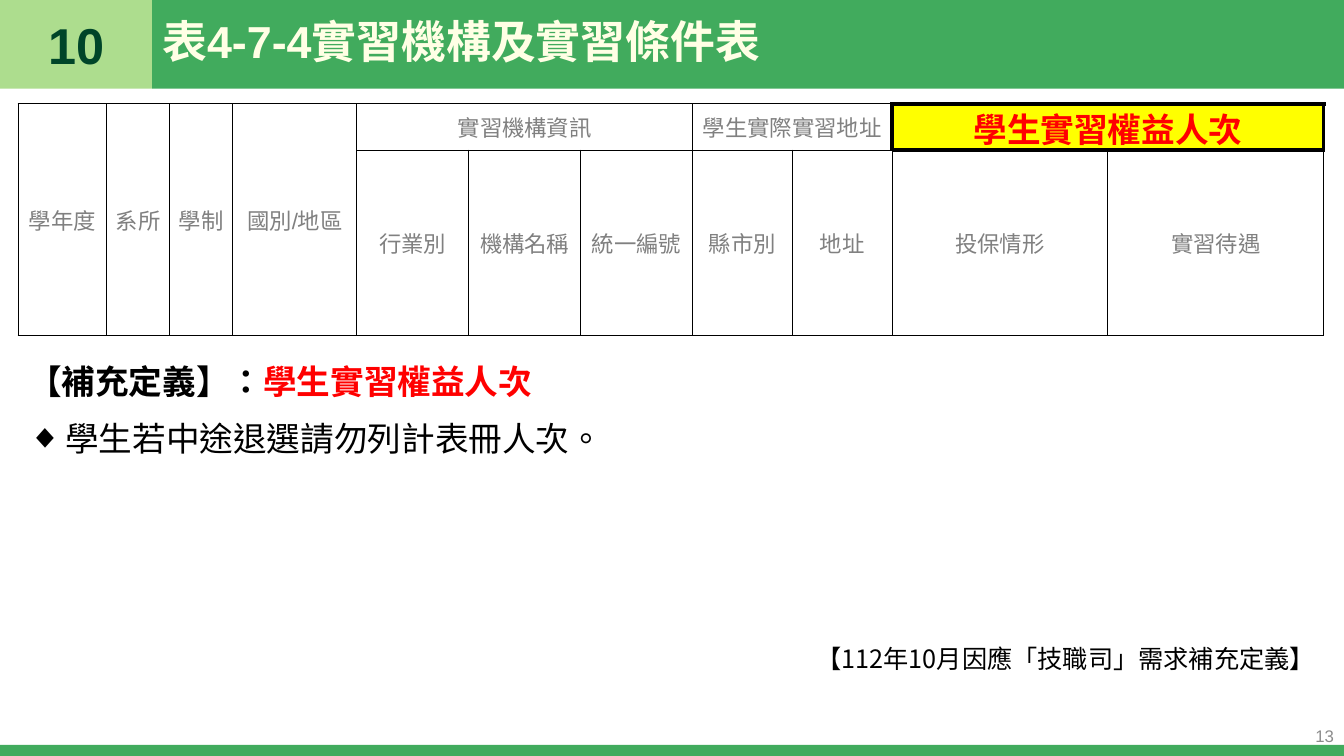
from dataclasses import dataclass

from lxml import etree
from pptx import Presentation
from pptx import util as u
from pptx.dml.color import RGBColor
from pptx.enum import shapes, text
from pptx.oxml.ns import qn


@dataclass(frozen=True)
class Theme:
    green: str = "41AB5D"
    light_green: str = "ADDD8E"
    dark_green: str = "004529"
    cream: str = "FFFFE5"
    black: str = "000000"
    gray: str = "808080"
    page_gray: str = "8C8C8C"
    red: str = "FF0000"
    yellow: str = "FFFF00"
    latin: str = "Arial"
    cjk: str = "Noto Sans CJK SC"
    number: int = 36
    title: int = 32
    body: int = 24
    note: int = 18
    cell: int = 16
    page: int = 12
    thin: int = 1
    thick: int = 3


class SlideBuilder:
    def __init__(self, slide, theme):
        self.slide = slide
        self.theme = theme

    def format_run(self, r, size, color, bold=False, font=None):
        r.font.size = u.Pt(size)
        r.font.bold = bold
        r.font.color.rgb = RGBColor.from_string(color)
        r.font.name = font or self.theme.latin
        rPr = r._r.get_or_add_rPr()
        rPr.set("lang", "zh-TW")
        etree.SubElement(rPr, qn("a:ea")).set("typeface", self.theme.cjk)

    def bar(self, left, top, width, height, color):
        sp = self.slide.shapes.add_shape(
            shapes.MSO_SHAPE.RECTANGLE, *map(u.Inches, (left, top, width, height)))
        sp.shadow.inherit = False
        sp.fill.solid()
        sp.fill.fore_color.rgb = RGBColor.from_string(color)
        sp.line.fill.background()

    def textbox(self, left, top, width, height, anchor=text.MSO_ANCHOR.MIDDLE):
        sp = self.slide.shapes.add_textbox(*map(u.Inches, (left, top, width, height)))
        tf = sp.text_frame
        tf.word_wrap = True
        tf.vertical_anchor = anchor
        return tf

    def paragraph(self, p, runs, align=text.PP_ALIGN.LEFT, spacing=1.0, before=0):
        p.alignment = align
        p.line_spacing = spacing
        p.space_before = u.Pt(before)
        for content, *style in runs:
            r = p.add_run()
            r.text = content
            self.format_run(r, *style)

    def bullet(self, p, symbol, indent):
        pPr = p._p.get_or_add_pPr()
        pPr.set("marL", str(u.Inches(indent)))
        pPr.set("indent", str(-u.Inches(indent)))
        etree.SubElement(pPr, qn("a:buFont")).set("typeface", self.theme.latin)
        etree.SubElement(pPr, qn("a:buChar")).set("char", symbol)

    def borders(self, cell, **widths):
        tcPr = cell._tc.get_or_add_tcPr()
        for side in "LRTB":
            width = widths.get(side, self.theme.thin)
            ln = etree.SubElement(tcPr, qn("a:ln" + side), w=str(u.Pt(width)))
            fill = etree.SubElement(ln, qn("a:solidFill"))
            etree.SubElement(fill, qn("a:srgbClr"), val=self.theme.black)

    def table(self, left, top, col_widths, row_heights, labels, merges, highlight):
        t = self.theme
        frame = self.slide.shapes.add_table(
            len(row_heights), len(col_widths), u.Inches(left), u.Inches(top),
            u.Inches(sum(col_widths)), u.Inches(sum(row_heights)))
        table = frame.table
        table.first_row = table.horz_banding = False
        for column, width in zip(table.columns, col_widths):
            column.width = u.Inches(width)
        for row, height in zip(table.rows, row_heights):
            row.height = u.Inches(height)
        for i in range(len(row_heights)):
            for j in range(len(col_widths)):
                cell = table.cell(i, j)
                marked = i == 0 and j >= highlight
                if marked:
                    self.borders(cell, **dict.fromkeys("LRTB", t.thick))
                    cell.fill.solid()
                    cell.fill.fore_color.rgb = RGBColor.from_string(t.yellow)
                else:
                    self.borders(cell,
                                 R=t.thick if (i, j) == (0, highlight - 1) else t.thin,
                                 T=t.thick if i == 1 and j >= highlight else t.thin)
                    cell.fill.background()
                cell.vertical_anchor = text.MSO_ANCHOR.MIDDLE
                cell.margin_left = cell.margin_right = u.Inches(0.07)
                cell.margin_top = cell.margin_bottom = 0
                if (i, j) in labels:
                    style = (t.body, t.red, True) if marked else (t.cell, t.gray)
                    self.paragraph(cell.text_frame.paragraphs[0],
                                   [(labels[i, j], *style)], text.PP_ALIGN.CENTER)
        for first, last in merges:
            table.cell(*first).merge(table.cell(*last))


def main():
    prs = Presentation()
    prs.slide_width, prs.slide_height = u.Inches(13.33), u.Inches(7.5)
    t = Theme()
    s = SlideBuilder(prs.slides.add_slide(prs.slide_layouts[6]), t)
    center, right = text.PP_ALIGN.CENTER, text.PP_ALIGN.RIGHT

    s.bar(0, 7.39, 13.33, 0.11, t.green)
    s.bar(0, 0, 1.51, 0.88, t.light_green)
    s.bar(1.51, 0, 11.82, 0.88, t.green)

    tf = s.textbox(1.51, 0, 11.62, 0.88)
    s.paragraph(tf.paragraphs[0],
                [("表4-7-4實習機構及實習條件表", t.title, t.cream, True)], spacing=0.9)
    tf = s.textbox(0, 0, 1.51, 0.88)
    s.paragraph(tf.paragraphs[0], [("10", t.number, t.dark_green, True)], center, before=10)
    tf = s.textbox(10.33, 7.1, 3, 0.4)
    s.paragraph(tf.paragraphs[0], [("13", t.page, t.page_gray)], right)

    single = ["學年度", "系所", "學制", "國別/地區"]
    groups = [("實習機構資訊", ["行業別", "機構名稱", "統一編號"]),
              ("學生實際實習地址", ["縣市別", "地址"]),
              ("學生實習權益人次", ["投保情形", "實習待遇"])]
    labels = {(0, j): label for j, label in enumerate(single)}
    merges = [((0, j), (1, j)) for j in range(len(single))]
    start = len(single)
    for heading, children in groups:
        labels[0, start] = heading
        labels.update({(1, start + k): child for k, child in enumerate(children)})
        merges.append(((0, start), (0, start + len(children) - 1)))
        start += len(children)
    col_widths = [0.88, 0.62, 0.63, 1.23] + [1.11] * 3 + [0.99] * 2 + [2.14] * 2
    s.table(0.18, 1.03, col_widths, [0.46, 1.84], labels, merges,
            highlight=start - len(groups[-1][1]))

    tf = s.textbox(0.18, 3.49, 12.96, 1.2, text.MSO_ANCHOR.TOP)
    s.paragraph(tf.paragraphs[0],
                [("【補充定義】：", t.body, t.black, True, t.cjk),
                 ("學生實習權益人次", t.body, t.red, True, t.cjk)], spacing=1.1, before=6)
    p = tf.add_paragraph()
    s.paragraph(p, [("學生若中途退選請勿列計表冊人次。", t.body, t.black)],
                spacing=1.2, before=6)
    s.bullet(p, "◆", 0.37)
    tf = s.textbox(0.18, 6.25, 12.96, 0.5)
    s.paragraph(tf.paragraphs[0],
                [("【112年10月因應「技職司」需求補充定義】", t.note, t.black, False, t.cjk)],
                right, spacing=1.2)

    prs.save("out.pptx")


if __name__ == "__main__":
    main()
